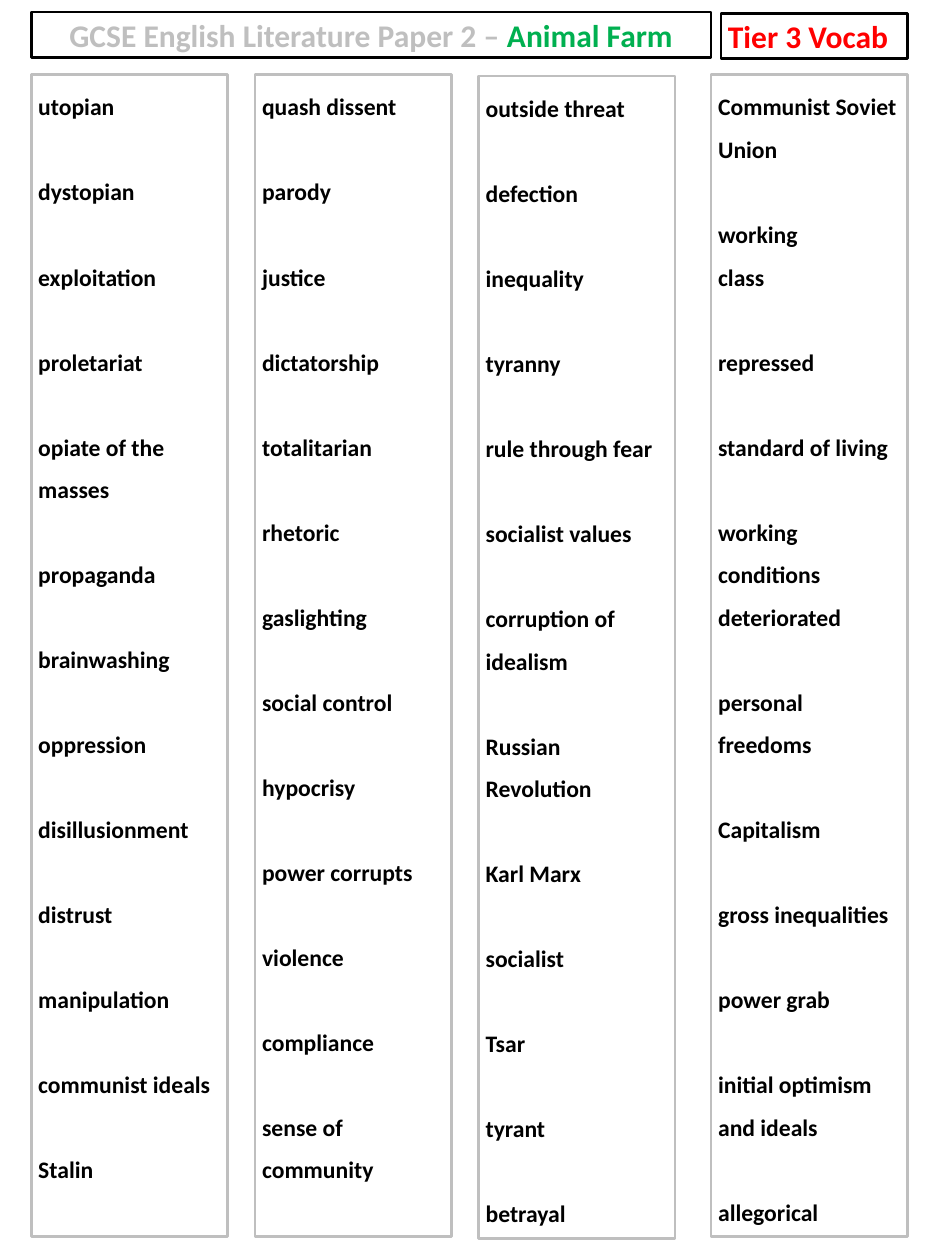
from dataclasses import dataclass

from pptx import Presentation
from pptx.dml.color import RGBColor as Rgb
from pptx.enum.text import MSO_ANCHOR as Anchor, MSO_AUTO_SIZE as Fit, PP_ALIGN as Align
from pptx.oxml import parse_xml
from pptx.oxml.ns import nsdecls
from pptx.util import Cm, Pt


@dataclass(frozen=True)
class Theme:
    font: str = "Calibri"
    head: float = 32
    body: float = 24
    gap: float = 43.2
    line: float = 2.75
    black: str = "000000"
    grey: str = "BFBFBF"
    green: str = "00B050"
    red: str = "FF0000"


def assign(item, values):
    for name, value in values.items():
        setattr(item, name, value)


class Sheet:
    def __init__(self, slide, theme):
        self.slide, self.theme = slide, theme

    def frame(self, shape, box, edge):
        places = ("left", "top", "width", "height")
        assign(shape, {name: Cm(size) for name, size in zip(places, box)})
        shape.fill.background()
        shape.line.color.rgb = Rgb.from_string(edge)
        shape.line.width = Pt(self.theme.line)
        text = shape.text_frame
        assign(text, {
            "auto_size": Fit.NONE, "word_wrap": True, "vertical_anchor": Anchor.TOP,
            "margin_left": Cm(0.25), "margin_right": Cm(0.25),
            "margin_top": Cm(0.13), "margin_bottom": Cm(0.13),
        })
        return text

    def words(self, para, text, size, color):
        run = para.add_run()
        run.text = text
        assign(run.font, {"name": self.theme.font, "size": Pt(size), "bold": True})
        run.font.color.rgb = Rgb.from_string(color)

    def heading(self, shape, box, runs, align):
        para = self.frame(shape, box, self.theme.black).paragraphs[0]
        para.alignment = align
        for text, color in runs:
            self.words(para, text, self.theme.head, color)

    def title(self, box, runs):
        self.heading(self.slide.shapes.title, box, runs, Align.CENTER)

    def label(self, box, text, color):
        shape = self.slide.shapes.add_textbox(0, 0, 0, 0)
        self.heading(shape, box, [(text, color)], Align.LEFT)

    def column(self, shape, box, terms):
        frame = self.frame(shape, box, self.theme.grey)
        para = frame.paragraphs[0]
        for count, term in enumerate(terms):
            for part, text in enumerate(term.split("|")):
                if count or part:
                    para = frame.add_paragraph()
                # A blank line's height separates terms, not parts of one term
                gap = self.theme.gap if count and not part else 0
                assign(para, {"alignment": Align.LEFT, "line_spacing": 1.5,
                              "space_before": Pt(gap), "space_after": Pt(0)})
                props = para._p.get_or_add_pPr()
                props.set("marL", "0")
                props.set("indent", "0")
                props.append(parse_xml(f"<a:buNone {nsdecls('a')}/>"))
                self.words(para, text, self.theme.body, self.theme.black)


# Left edge, top edge and terms of each column
COLUMNS = [
    (1.12, 2.67, ["utopian", "dystopian", "exploitation", "proletariat",
                  "opiate of the masses", "propaganda", "brainwashing", "oppression",
                  "disillusionment", "distrust", "manipulation", "communist ideals",
                  "Stalin"]),
    (9.14, 2.67, ["quash dissent", "parody", "justice", "dictatorship", "totalitarian",
                  "rhetoric", "gaslighting", "social control", "hypocrisy",
                  "power corrupts", "violence", "compliance", "sense of community"]),
    (17.15, 2.72, ["outside threat", "defection", "inequality", "tyranny",
                   "rule through fear", "socialist values", "corruption of idealism",
                   "Russian Revolution", "Karl Marx", "socialist", "Tsar", "tyrant",
                   "betrayal"]),
    (25.48, 2.67, ["Communist Soviet Union", "working|class", "repressed",
                   "standard of living", "working conditions|deteriorated",
                   "personal freedoms", "Capitalism", "gross inequalities",
                   "power grab", "initial optimism and ideals", "allegorical"]),
]


def main():
    deck = Presentation()
    assign(deck, {"slide_width": Cm(33.86), "slide_height": Cm(45.16)})
    # The comparison layout has a title and four text placeholders
    slide = deck.slides.add_slide(deck.slide_layouts.get_by_name("Comparison"))
    theme = Theme()
    sheet = Sheet(slide, theme)

    # Header
    sheet.label((25.83, 0.48, 6.68, 1.63), "Tier 3 Vocab", theme.red)
    sheet.title((1.12, 0.43, 24.36, 1.63), [
        ("GCSE English Literature Paper 2 – ", theme.grey),
        ("Animal Farm", theme.green),
    ])

    # Vocabulary columns
    bodies = list(slide.placeholders)[1:]
    for shape, (left, top, terms) in zip(bodies, COLUMNS):
        sheet.column(shape, (left, top, 7.04, 41.66), terms)

    deck.save("out.pptx")


if __name__ == "__main__":
    main()
